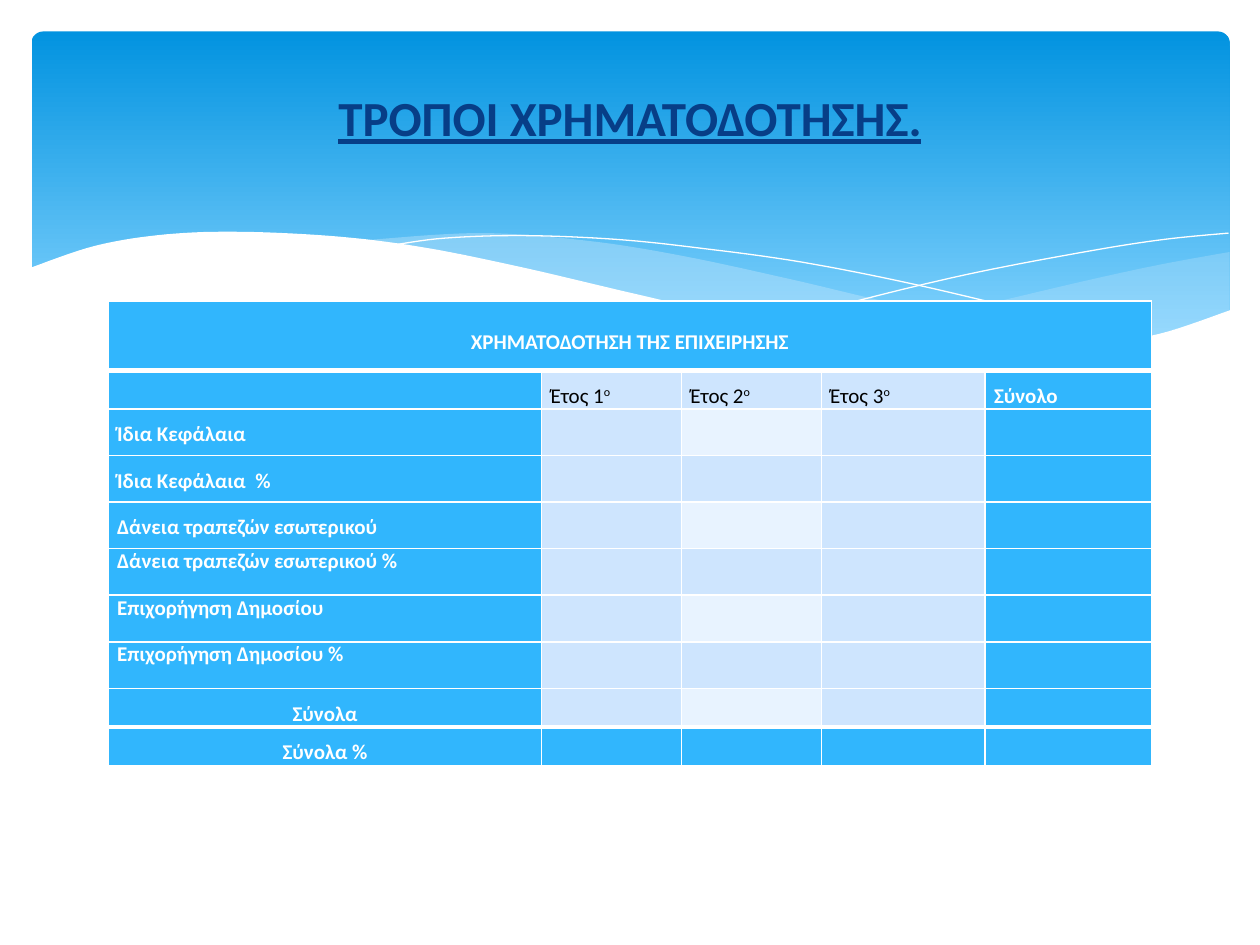
import dataclasses

import pptx
import pptx.dml.color
import pptx.enum.shapes
import pptx.enum.text
import pptx.oxml
import pptx.oxml.ns
import pptx.util

Inches = pptx.util.Inches
Pt = pptx.util.Pt
ALIGN = pptx.enum.text.PP_ALIGN
ANCHOR = pptx.enum.text.MSO_ANCHOR


@dataclasses.dataclass(frozen=True)
class Theme:
    font: str = "Calibri"
    title_size: int = 28
    cell_size: int = 12
    title: str = "073E87"
    sky_top: str = "0293E0"
    sky_bottom: str = "83D3FE"
    wave: str = "C6E7FC"
    white: str = "FFFFFF"
    black: str = "000000"
    strong: str = "31B6FD"
    band: str = "CEE5FE"
    pale: str = "E8F3FF"


THEME = Theme()

RIGHT_WAVE_TOP = [(9.76, 2), (9.21, 2.1), (8.61, 2.23), (7.53, 2.48), (6.61, 2.65)]
RIGHT_WAVE_BOTTOM = [(6.61, 2.65), (7.19, 2.72), (7.92, 2.77), (8.54, 2.76),
                     (9.13, 2.67), (9.76, 2.47)]
MIDDLE_WAVE_TOP = [(8.93, 2.73), (8.07, 2.6), (7.06, 2.4), (6.29, 2.22), (5.41, 2.03),
                   (4.65, 1.91), (3.8, 1.85), (2.86, 1.91)]
MIDDLE_WAVE_BOTTOM = [(2.86, 1.91), (3.62, 2.03), (4.49, 2.22), (5.3, 2.4), (6.18, 2.58),
                      (7.09, 2.72), (7.96, 2.78), (8.93, 2.73)]
FALLING_LINE = [(3.09, 1.95), (3.53, 1.89), (4.16, 1.87), (4.89, 1.9), (5.56, 1.97),
                (6.36, 2.08), (7.27, 2.26), (8.31, 2.51), (9.07, 2.72)]
RISING_LINE = [(6.13, 2.57), (6.95, 2.35), (7.76, 2.16), (8.66, 1.99), (9.24, 1.9), (9.75, 1.85)]
FRONT_WAVE = [(9.77, 2.46), (9.2, 2.65), (8.63, 2.74), (8.09, 2.77), (7.44, 2.74),
              (6.68, 2.65), (5.79, 2.5), (5.03, 2.33), (4.18, 2.13), (3.4, 1.97),
              (2.71, 1.88), (1.93, 1.84), (1.32, 1.86), (0.76, 1.95), (0.23, 2.13)]

COLUMNS = [3.44, 1.11, 1.11, 1.3, 1.32]
ROWS = [0.55, 0.3] + [0.37] * 6 + [0.3] * 2
TABLE_TITLE = "ΧΡΗΜΑΤΟΔΟΤΗΣΗ ΤΗΣ ΕΠΙΧΕΙΡΗΣΗΣ"
YEARS = ["Έτος 1", "Έτος 2", "Έτος 3"]
LABELS = ["Ίδια Κεφάλαια", "Ίδια Κεφάλαια  %", "Δάνεια τραπεζών εσωτερικού",
          "Δάνεια τραπεζών εσωτερικού %", "Επιχορήγηση Δημοσίου",
          "Επιχορήγηση Δημοσίου %", "Σύνολα", "Σύνολα %"]
SINGLE_SPACED_ROWS = (5, 6, 7)


def rgb(value):
    return pptx.dml.color.RGBColor.from_string(value)


def smooth(knots, steps=8):
    padded = [knots[0], *knots, knots[-1]]
    points = [knots[0]]
    for a, b, c, d in zip(padded, padded[1:], padded[2:], padded[3:]):
        for i in range(1, steps + 1):
            t = i / steps
            points.append(tuple(
                (2 * q + (r - p) * t + (2 * p - 5 * q + 4 * r - u) * t ** 2
                 + (3 * q - p - 3 * r + u) * t ** 3) / 2
                for p, q, r, u in zip(a, b, c, d)))
    return points


def add_outline(s, points, closed):
    emu = [(Inches(x), Inches(y)) for x, y in points]
    builder = s.shapes.build_freeform(*emu[0])
    builder.add_line_segments(emu[1:], close=closed)
    sp = builder.convert_to_shape()
    sp.shadow.inherit = False
    return sp


def add_wave(s, points, color, opacity=100):
    sp = add_outline(s, points, True)
    sp.fill.solid()
    sp.fill.fore_color.rgb = rgb(color)
    sp.line.fill.background()
    if opacity < 100:
        clr = sp.fill._xPr.find(".//" + pptx.oxml.ns.qn("a:srgbClr"))
        clr.append(pptx.oxml.parse_xml(
            f'<a:alpha {pptx.oxml.ns.nsdecls("a")} val="{opacity * 1000}"/>'))


def add_curve(s, knots):
    sp = add_outline(s, smooth(knots), False)
    sp.fill.background()
    sp.line.color.rgb = rgb(THEME.white)
    sp.line.width = Pt(0)


def add_sky(s):
    sp = s.shapes.add_shape(pptx.enum.shapes.MSO_SHAPE.ROUNDED_RECTANGLE,
                            Inches(0.25), Inches(0.25), Inches(9.51), Inches(2.7))
    sp.adjustments[0] = 0.034
    sp.shadow.inherit = False
    sp.line.fill.background()
    sp.fill.gradient()
    sp.fill.gradient_angle = 270
    colors = [(0, THEME.sky_top), (0.9, THEME.sky_bottom)]
    for stop, (position, color) in zip(sp.fill.gradient_stops, colors):
        stop.position = position
        stop.color.rgb = rgb(color)


def add_run(p, text, size, color, bold=True):
    r = p.add_run()
    r.text = text
    r.font.name = THEME.font
    r.font.size = Pt(size)
    r.font.bold = bold
    r.font.color.rgb = rgb(color)
    return r


def add_title(s, text):
    sp = s.shapes.add_textbox(Inches(0.5), Inches(0.37), Inches(9), Inches(1.37))
    tf = sp.text_frame
    tf.word_wrap = True
    tf.vertical_anchor = ANCHOR.MIDDLE
    tf.margin_bottom = Inches(0.3)
    p = tf.paragraphs[0]
    p.alignment = ALIGN.CENTER
    add_run(p, text, THEME.title_size, THEME.title).font.underline = True


def set_borders(cell, top, bottom):
    tcPr = cell._tc.get_or_add_tcPr()
    widths = {"lnL": 1, "lnR": 1, "lnT": top, "lnB": bottom}
    for i, (tag, width) in enumerate(widths.items()):
        tcPr.insert(i, pptx.oxml.parse_xml(
            f'<a:{tag} {pptx.oxml.ns.nsdecls("a")} w="{Pt(width)}"><a:solidFill>'
            f'<a:srgbClr val="{THEME.white}"/></a:solidFill></a:{tag}>'))


def cell_color(row, col):
    if row in (0, len(ROWS) - 1) or col in (0, len(COLUMNS) - 1):
        return THEME.strong
    return THEME.pale if col == 2 and row % 2 == 0 else THEME.band


def style_cell(cell, row, col):
    cell.fill.solid()
    cell.fill.fore_color.rgb = rgb(cell_color(row, col))
    last = len(ROWS) - 1
    set_borders(cell, 3 if row in (1, last) else 1, 3 if row in (0, last - 1) else 1)
    cell.margin_left = cell.margin_right = Inches(0.07)
    cell.margin_top = cell.margin_bottom = 0
    p = cell.text_frame.paragraphs[0]
    p.alignment = ALIGN.JUSTIFY
    p.line_spacing = 1.0 if row in SINGLE_SPACED_ROWS else 1.5
    p.space_after = Pt(6)
    p._p.get_or_add_endParaRPr().set("sz", str(THEME.cell_size * 100))


def add_funding_table(s):
    frame = s.shapes.add_table(len(ROWS), len(COLUMNS), Inches(0.86), Inches(2.39),
                               Inches(sum(COLUMNS)), Inches(sum(ROWS)))
    table = frame.table
    table.first_row = table.horz_banding = False
    for column, width in zip(table.columns, COLUMNS):
        column.width = Inches(width)
    for i, (row, height) in enumerate(zip(table.rows, ROWS)):
        row.height = Inches(height)
        for j, cell in enumerate(row.cells):
            style_cell(cell, i, j)

    def write(row, col, text, color=THEME.white, bold=True):
        p = table.cell(row, col).text_frame.paragraphs[0]
        add_run(p, text, THEME.cell_size, color, bold)
        return p

    table.cell(0, 0).merge(table.cell(0, len(COLUMNS) - 1))
    table.cell(0, 0).vertical_anchor = ANCHOR.MIDDLE
    write(0, 0, TABLE_TITLE).alignment = ALIGN.CENTER
    for col, year in enumerate(YEARS, 1):
        p = write(1, col, year, THEME.black, False)
        r = add_run(p, "ο", THEME.cell_size, THEME.black, False)
        r.font._element.set("baseline", "30000")
    write(1, len(COLUMNS) - 1, "Σύνολο")
    for row, label in enumerate(LABELS, 2):
        p = write(row, 0, label)
        if label.startswith("Σύνολα"):
            p.alignment = ALIGN.CENTER


def main():
    prs = pptx.Presentation()
    prs.slide_width, prs.slide_height = Inches(10), Inches(7.5)
    s = prs.slides.add_slide(prs.slide_layouts[6])
    add_sky(s)
    add_wave(s, smooth(RIGHT_WAVE_TOP) + smooth(RIGHT_WAVE_BOTTOM), THEME.wave, 29)
    add_wave(s, smooth(MIDDLE_WAVE_TOP) + smooth(MIDDLE_WAVE_BOTTOM), THEME.wave, 40)
    add_curve(s, FALLING_LINE)
    add_curve(s, RISING_LINE)
    add_wave(s, smooth(FRONT_WAVE) + [(0.23, 3.29), (9.77, 3.29)], THEME.white)
    add_funding_table(s)
    add_title(s, "ΤΡΟΠΟΙ ΧΡΗΜΑΤΟΔΟΤΗΣΗΣ.")
    prs.save("out.pptx")


if __name__ == "__main__":
    main()
